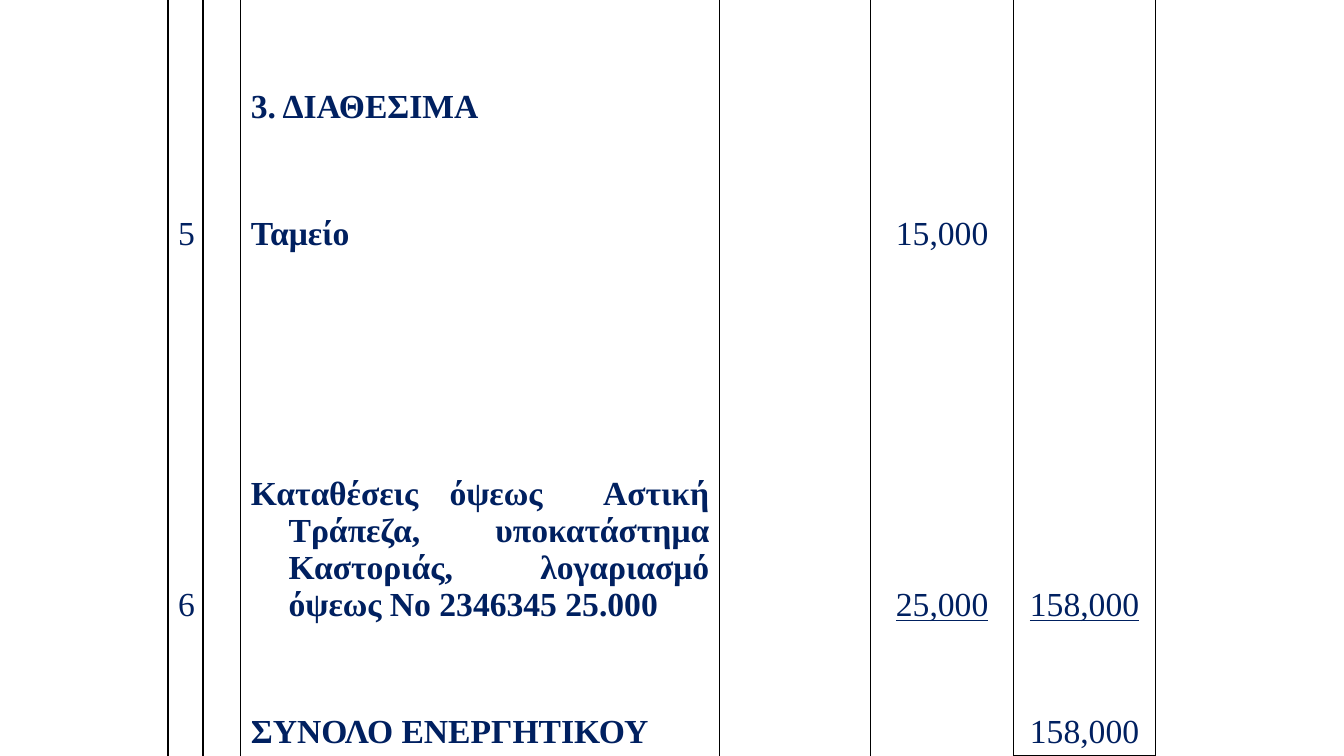
import pptx
import pptx.util
import pptx.dml.color
import pptx.enum.text
import pptx.oxml.ns
import lxml.etree

Pt = pptx.util.Pt
ALIGN = pptx.enum.text.PP_ALIGN
BOTTOM = pptx.enum.text.MSO_ANCHOR.BOTTOM
qn = pptx.oxml.ns.qn


def color(text):
    return pptx.dml.color.RGBColor.from_string(text)


def edge(cell, side, shown):
    """Draw one cell border, or clear it when it is not shown."""
    props = cell._tc.get_or_add_tcPr()
    line = lxml.etree.SubElement(props, qn("a:ln" + side), w=str(Pt(1)))
    if shown:
        fill = lxml.etree.SubElement(line, qn("a:solidFill"))
        lxml.etree.SubElement(fill, qn("a:srgbClr"), val="000000")
    else:
        lxml.etree.SubElement(line, qn("a:noFill"))


deck = pptx.Presentation()
deck.slide_width, deck.slide_height = Pt(960), Pt(540)
slide = deck.slides.add_slide(deck.slide_layouts[6])

widths = [25, 27, 342, 108, 102, 101.5]
heights = [93.6, 90.7, 265, 90.7]
rows = [
    ["", "", "3. ΔΙΑΘΕΣΙΜΑ", "", "", ""],
    ["5", "", "Ταμείο", "", "15,000", ""],
    ["6", "", "Καταθέσεις όψεως  Αστική Τράπεζα, υποκατάστημα Καστοριάς, "
     "λογαριασμό όψεως Νο 2346345 25.000", "", "25,000", "158,000"],
    ["", "", "ΣΥΝΟΛΟ ΕΝΕΡΓΗΤΙΚΟΥ", "", "", "158,000"],
]
NAME, LONG, LAST = 2, 2, len(rows) - 1
TOTAL = (LAST, len(widths) - 1)

frame = slide.shapes.add_table(len(rows), len(widths), Pt(120), Pt(0),
                               Pt(sum(widths)), Pt(sum(heights)))
table = frame.table
table.first_row = table.horz_banding = False
for col, width in zip(table.columns, widths):
    col.width = Pt(width)
for row, height in zip(table.rows, heights):
    row.height = Pt(height)

for r, texts in enumerate(rows):
    for c, text in enumerate(texts):
        cell = table.cell(r, c)
        cell.vertical_anchor = BOTTOM
        for side in "LRTB":
            edge(cell, side, side in "LR" or (side == "B" and (r, c) == TOTAL))
        cell.fill.background()
        if not text:
            continue

        para = cell.text_frame.paragraphs[0]
        if c != NAME:
            para.alignment = ALIGN.CENTER
        elif r == LONG:
            para.alignment = ALIGN.JUSTIFY
        indent = para._p.get_or_add_pPr()
        indent.set("marL", str(Pt(27)))
        indent.set("indent", str(Pt(-27)))

        run = para.add_run()
        run.text = text
        style = {"name": "Times New Roman", "size": Pt(24), "bold": c == NAME,
                 "underline": r == LONG and c > NAME}
        for key, value in style.items():
            setattr(run.font, key, value)
        run.font.color.rgb = color("002060")

deck.save("out.pptx")
